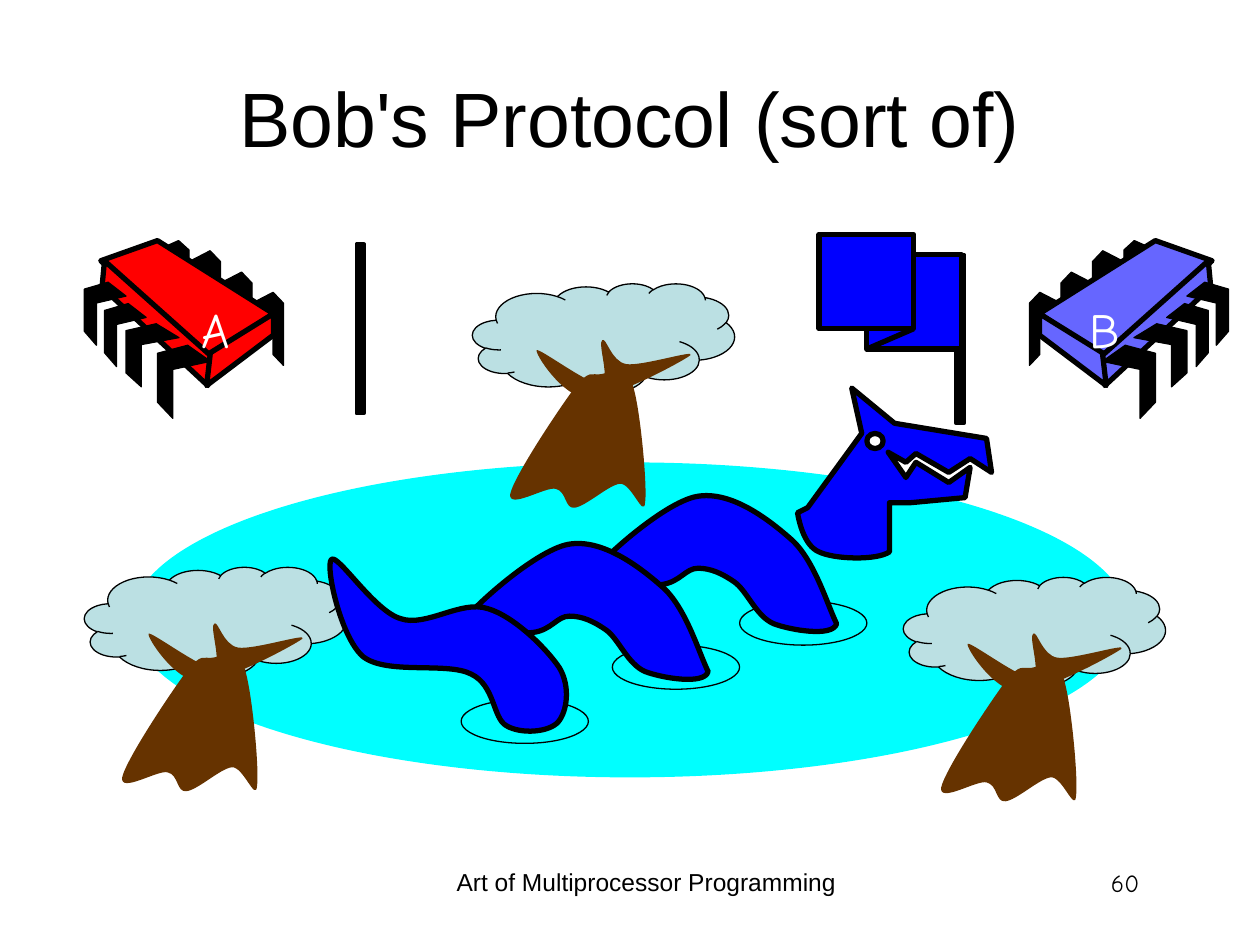
from lxml import etree
from pptx import Presentation
from pptx.dml.color import RGBColor
from pptx.enum.shapes import MSO_CONNECTOR, MSO_SHAPE
from pptx.enum.text import MSO_ANCHOR, PP_ALIGN
from pptx.oxml.ns import qn
from pptx.util import Inches, Pt

RECT, OVAL, CLOUD = MSO_SHAPE.RECTANGLE, MSO_SHAPE.OVAL, MSO_SHAPE.CLOUD_CALLOUT
LEFT, CENTER, RIGHT = PP_ALIGN.LEFT, PP_ALIGN.CENTER, PP_ALIGN.RIGHT
TOP, MIDDLE = MSO_ANCHOR.TOP, MSO_ANCHOR.MIDDLE
BLACK, WHITE, BLUE = "000000", "FFFFFF", "0000FF"
LAKE, LEAVES, BARK = "00FFFF", "BBE0E3", "663300"
THIN, POLE, THICK = 0.75, 2.25, 3

# Outlines: a pair is a corner, six numbers are a cubic curve to the last pair.
# Legs are drawn in a unit square and stretched to their boxes.
BACK_LEG = [(0, 0.15), (0.67, 0), (1, 0.15), (1, 1), (0.67, 0.85), (0.67, 0.29), (0, 0.43)]
FRONT_LEG = [(0.57, 0), (1, 0.22), (0.29, 0.33), (0.29, 1), (0, 0.78), (0, 0.11)]
BACK_LEG_BOXES = [(2, 2.32, 0.25, 0.58), (1.75, 2.16, 0.25, 0.58),
                  (1.5, 1.99, 0.25, 0.58), (1.25, 1.91, 0.25, 0.5)]
FRONT_LEG_BOXES = [(1.25, 2.74, 0.42, 0.58), (1, 2.57, 0.42, 0.5),
                   (0.83, 2.41, 0.33, 0.5), (0.67, 2.24, 0.33, 0.5)]
CHIP_FACES = [
    [(1.25, 1.91), (2.17, 2.49), (1.65, 2.84), (0.8, 2.07)],
    [(0.83, 2.07), (1.67, 2.82), (1.65, 3.06), (0.81, 2.28)],
    [(2.17, 2.49), (2.17, 2.66), (1.64, 3.06), (1.67, 2.8)],
]
CHIP_MIRROR = 10.42  # x of chip B = CHIP_MIRROR - x of chip A
CHIPS = [("FF0000", False), ("6666FF", True)]
CHIP_LABELS = [("A", (1.43, 2.33, 0.49, 0.57)), ("B", (8.54, 2.33, 0.45, 0.57))]

TREES = [(3.75, 2.25), (7.17, 4.58), (0.67, 4.5)]
TRUNK = [
    (0.81, 0.83), (0.93, 0.68, 0.94, 0.73, 1.02, 0.72), (1.09, 0.71, 1.21, 0.63, 1.27, 0.8),
    (1.33, 0.97, 1.39, 1.61, 1.37, 1.74), (1.36, 1.87, 1.26, 1.58, 1.17, 1.59),
    (1.08, 1.6, 0.9, 1.77, 0.81, 1.78), (0.73, 1.79, 0.75, 1.65, 0.66, 1.63),
    (0.58, 1.61, 0.28, 1.8, 0.3, 1.67), (0.33, 1.53, 0.69, 0.99, 0.81, 0.83),
]
BRANCHES = [
    (0.51, 0.53), (0.49, 0.55, 0.71, 0.9, 0.91, 0.91), (1.12, 0.92, 1.68, 0.61, 1.73, 0.57),
    (1.78, 0.52, 1.34, 0.66, 1.22, 0.64), (1.1, 0.62, 1.06, 0.42, 1.03, 0.45),
    (0.99, 0.47, 1.1, 0.78, 1.02, 0.8), (0.93, 0.81, 0.53, 0.51, 0.51, 0.53),
]

RIPPLES = [(4.86, 5.12), (3.66, 5.55), (5.87, 4.77)]
HUMP_SHIFTS = [(0, 0), (-1.02, 0.38)]
HUMP = [
    (6.64, 4.95), (6.61, 5.06, 6.27, 5, 6.14, 4.95), (6, 4.89, 5.93, 4.69, 5.83, 4.62),
    (5.73, 4.55, 5.64, 4.51, 5.54, 4.51), (5.44, 4.51, 5.4, 4.62, 5.25, 4.64),
    (5.11, 4.65, 4.61, 4.72, 4.66, 4.6), (4.71, 4.49, 5.26, 3.99, 5.53, 3.94),
    (5.8, 3.89, 6.1, 4.12, 6.29, 4.29), (6.47, 4.46, 6.57, 4.81, 6.64, 4.95),
]
HEAD = [
    (6.41, 4.03), (6.84, 3.44), (6.76, 3.08), (7.1, 3.36), (7.83, 3.48), (7.87, 3.75),
    (7.7, 3.64), (7.53, 3.75), (7.27, 3.6), (7.19, 3.67), (7.05, 3.59), (7.19, 3.79),
    (7.27, 3.67), (7.53, 3.83), (7.7, 3.71), (7.66, 3.95), (7.23, 3.99), (7.06, 3.99),
    (7.06, 4.38), (6.96, 4.45, 6.62, 4.44, 6.5, 4.38), (6.38, 4.33, 6.34, 4.13, 6.33, 4.07),
]
TAIL = [
    (2.63, 4.44), (2.68, 4.39, 2.97, 4.85, 3.18, 4.91), (3.38, 4.98, 3.66, 4.76, 3.87, 4.83),
    (4.08, 4.89, 4.34, 5.15, 4.44, 5.3), (4.53, 5.45, 4.5, 5.65, 4.43, 5.73),
    (4.36, 5.81, 4.14, 5.83, 4.02, 5.76), (3.91, 5.7, 3.93, 5.44, 3.74, 5.35),
    (3.55, 5.25, 3.07, 5.36, 2.88, 5.21), (2.7, 5.05, 2.58, 4.49, 2.63, 4.44),
]

prs = Presentation()
prs.slide_width, prs.slide_height = Inches(10), Inches(7.5)
shapes = prs.slides.add_slide(prs.slide_layouts[6]).shapes


def rgb(color):
    return RGBColor.from_string(color)


def paint(shape, fill, line_width):
    """Set fill and black outline; None leaves either one out."""
    shape.shadow.inherit = False
    if fill:
        shape.fill.solid()
        shape.fill.fore_color.rgb = rgb(fill)
    else:
        shape.fill.background()
    if line_width:
        shape.line.color.rgb = rgb(BLACK)
        shape.line.width = Pt(line_width)
    else:
        shape.line.fill.background()


def add_preset(kind, box, fill=None, line_width=None):
    shape = shapes.add_shape(kind, *map(Inches, box))
    paint(shape, fill, line_width)
    return shape


def bend(shape, segments):
    """Turn the straight segments that have control points into cubic curves."""
    left, top = shape.left, shape.top
    for straight, points in zip(list(shape._element.iter(qn("a:lnTo"))), segments):
        if len(points) == 3:
            curve = etree.Element(qn("a:cubicBezTo"))
            for x, y in points:
                etree.SubElement(curve, qn("a:pt"), x=str(x - left), y=str(y - top))
            straight.getparent().replace(straight, curve)


def add_outline(outline, fill, line_width=None, shift=(0, 0), scale=(1, 1), mirrored=False):
    def place(x, y):
        x, y = shift[0] + x * scale[0], shift[1] + y * scale[1]
        return Inches(CHIP_MIRROR - x if mirrored else x), Inches(y)

    segments = [[place(*pair) for pair in zip(part[::2], part[1::2])] for part in outline]
    ends = [points[-1] for points in segments]
    builder = shapes.build_freeform(*ends[0])
    builder.add_line_segments(ends[1:], close=True)
    shape = builder.convert_to_shape()
    bend(shape, segments[1:])
    paint(shape, fill, line_width)


def add_text(text, box, size=14, font="Arial", color=BLACK, align=LEFT, anchor=TOP, wrap=True):
    frame = shapes.add_textbox(*map(Inches, box)).text_frame
    frame.word_wrap = wrap
    frame.vertical_anchor = anchor
    paragraph = frame.paragraphs[0]
    paragraph.alignment = align
    run = paragraph.add_run()
    run.text = text
    run.font.size, run.font.name = Pt(size), font
    run.font.color.rgb = rgb(color)


def add_chip(color, mirrored):
    def add_legs(leg, boxes):
        for x, y, width, height in boxes:
            add_outline(leg, BLACK, THIN, (x, y), (width, height), mirrored)

    add_legs(BACK_LEG, BACK_LEG_BOXES)
    for face in CHIP_FACES:
        add_outline(face, color, THICK, mirrored=mirrored)
    add_legs(FRONT_LEG, FRONT_LEG_BOXES)


def add_tree(origin):
    crown = add_preset(CLOUD, (*origin, 2.08, 0.87), LEAVES, THIN)
    crown.adjustments[0], crown.adjustments[1] = 0.018, 0.493
    for wood in (TRUNK, BRANCHES):
        add_outline(wood, BARK, shift=origin)


def add_raised_flag():
    add_preset(RECT, (7.59, 2.02, 0.06, 1.34), BLACK, POLE)
    add_preset(RECT, (6.88, 2.02, 0.75, 0.75), BLUE, THICK)
    fold = shapes.add_connector(MSO_CONNECTOR.STRAIGHT, *map(Inches, (6.88, 2.77, 7.25, 2.61)))
    fold.line.color.rgb = rgb(BLACK)
    fold.line.width = Pt(THICK)
    etree.SubElement(fold._element.spPr, qn("a:effectLst"))
    add_preset(RECT, (6.5, 1.86, 0.75, 0.75), BLUE, THICK)


def add_dragon():
    for ripple in RIPPLES:
        add_preset(OVAL, (*ripple, 1.01, 0.35), line_width=THIN)
    for shift in HUMP_SHIFTS:
        add_outline(HUMP, BLUE, THICK, shift)
    add_outline(HEAD, BLUE, THICK)
    add_preset(OVAL, (6.88, 3.44, 0.13, 0.12), WHITE, THICK)
    add_outline(TAIL, BLUE, THICK)


add_text("60", (7.06, 6.84, 2.08, 0.5), font="Comic Neue", align=RIGHT)
add_text("Bob's Protocol (sort of)", (0.5, 0.3, 9, 1.25), size=44, align=CENTER, anchor=MIDDLE)
for color, mirrored in CHIPS:
    add_chip(color, mirrored)
add_preset(OVAL, (1.04, 3.67, 7.92, 2.5), LAKE)
for letter, box in CHIP_LABELS:
    add_text(letter, box, size=28, font="Comic Neue", color=WHITE, align=RIGHT, wrap=False)
for origin in TREES:
    add_tree(origin)
add_raised_flag()
add_preset(RECT, (2.83, 1.94, 0.06, 1.34), BLACK, POLE)
add_dragon()
add_text("Art of Multiprocessor Programming", (3.42, 6.83, 3.42, 0.52), align=CENTER)

prs.save("out.pptx")
